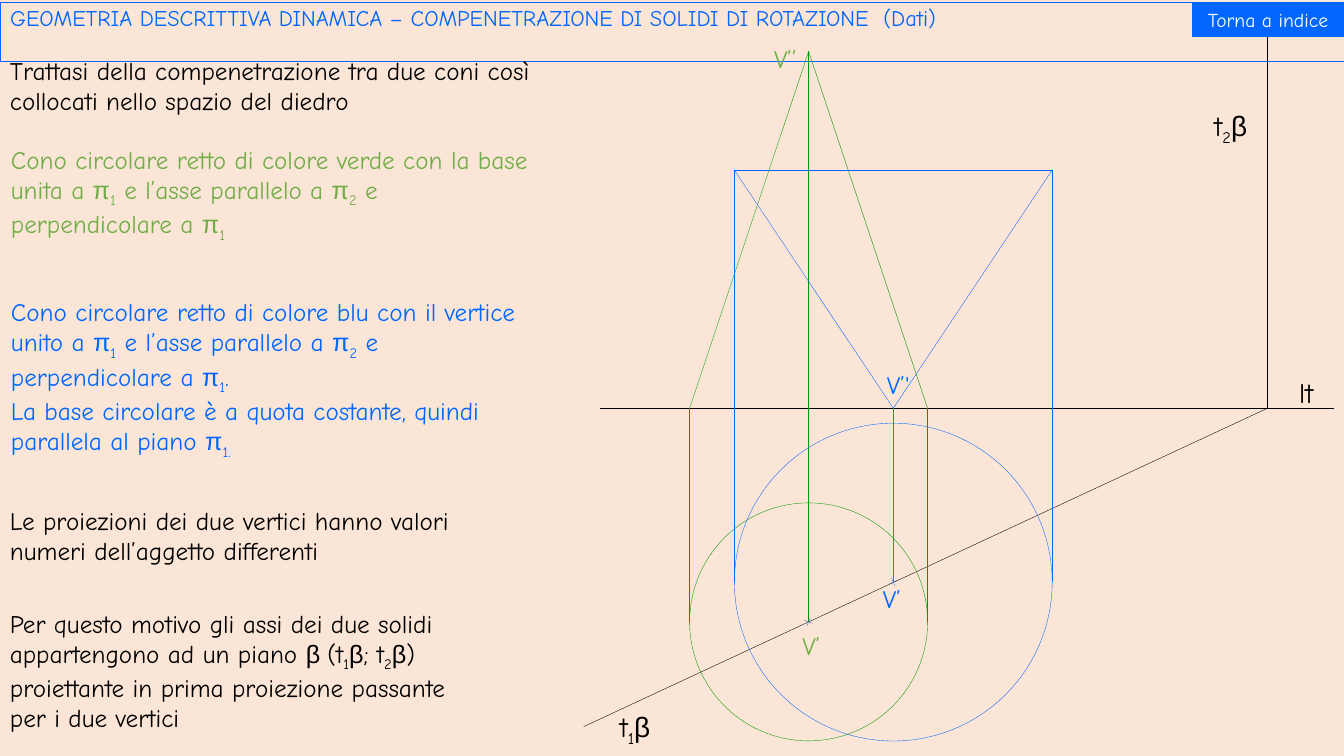
from lxml.etree import SubElement
from pptx import Presentation
from pptx.dml.color import RGBColor
from pptx.enum.shapes import MSO_CONNECTOR, MSO_SHAPE
from pptx.enum.text import MSO_ANCHOR, MSO_AUTO_SIZE, PP_ALIGN
from pptx.oxml.ns import qn
from pptx.util import Pt

BLACK = RGBColor(0x00, 0x00, 0x00)
WHITE = RGBColor(0xFF, 0xFF, 0xFF)
PEACH = RGBColor(0xFB, 0xE5, 0xD6)
BLUE = RGBColor(0x00, 0x66, 0xFF)
STEEL = RGBColor(0x44, 0x72, 0xC4)
GREEN = RGBColor(0x00, 0x99, 0x00)
LEAF = RGBColor(0x70, 0xAD, 0x47)


class Board:
    font = "Comic Neue"
    greek = "Arial"
    thin = Pt(0.25)

    def __init__(self, slide):
        self.shapes = slide.shapes
        fill = slide.background.fill
        fill.solid()
        fill.fore_color.rgb = PEACH

    def edge(self, shape, color):
        shape.line.color.rgb = color
        shape.line.width = self.thin

    def letter(self, frame, paras, size, color):
        """Runs that start with a digit are subscripts; Greek runs use Arial."""
        frame.word_wrap = True
        frame.auto_size = MSO_AUTO_SIZE.NONE
        for i, runs in enumerate(paras):
            para = frame.paragraphs[0] if i == 0 else frame.add_paragraph()
            for text in runs:
                run = para.add_run()
                run.text = text
                font = run.font
                font.size = Pt(size)
                font.color.rgb = color
                font.name = self.greek if text[0] in "πβ" else self.font
                if text[0].isdigit():
                    run._r.get_or_add_rPr().set("baseline", "-25000")

    def title(self, x, y, w, h, text):
        shape = self.shapes.title
        shape.left, shape.top, shape.width, shape.height = map(Pt, (x, y, w, h))
        self.edge(shape, BLUE)
        frame = shape.text_frame
        self.letter(frame, [[text]], 16, BLUE)
        frame.vertical_anchor = MSO_ANCHOR.TOP
        frame.paragraphs[0].alignment = PP_ALIGN.LEFT
        frame.paragraphs[0].line_spacing = 0.9

    def text(self, x, y, w, h, paras, color, size=18):
        box = self.shapes.add_textbox(Pt(x), Pt(y), Pt(w), Pt(h))
        self.letter(box.text_frame, paras, size, color)

    def line(self, x1, y1, x2, y2, color):
        link = self.shapes.add_connector(
            MSO_CONNECTOR.STRAIGHT, Pt(x1), Pt(y1), Pt(x2), Pt(y2))
        self.edge(link, color)
        SubElement(link._element.spPr, qn("a:effectLst"))

    def ring(self, x, y, r, color):
        ring = self.shapes.add_shape(
            MSO_SHAPE.OVAL, Pt(x - r), Pt(y - r), Pt(2 * r), Pt(2 * r))
        ring.shadow.inherit = False
        ring.rotation = 335
        ring.fill.background()
        self.edge(ring, color)

    def cross(self, x, y, a, b):
        for dx, dy in ((a, b), (-b, a)):
            self.line(x - dx, y - dy, x + dx, y + dy, STEEL)

    def cone(self, x, y, r, tip, base, color):
        """Plan circle at (x, y), elevation between tip and base heights."""
        self.ring(x, y, r, color)
        for side in (x - r, x + r):
            self.line(side, base, side, y, color)
            self.line(side, base, x, tip, color)

    def button(self, x, y, w, h, text):
        shape = self.shapes.add_shape(
            MSO_SHAPE.ACTION_BUTTON_CUSTOM, Pt(x), Pt(y), Pt(w), Pt(h))
        shape.shadow.inherit = False
        shape.fill.solid()
        shape.fill.fore_color.rgb = BLUE
        shape.line.fill.background()
        frame = shape.text_frame
        self.letter(frame, [[text]], 14, WHITE)
        frame.vertical_anchor = MSO_ANCHOR.MIDDLE
        frame.paragraphs[0].alignment = PP_ALIGN.CENTER


# Key points of the drawing
GROUND = 291.7
TRACE = 905.2
GX, GY, GR, APEX = 577.6, 444.2, 85, 36.7
BX, BY, BR, TOP = 638.1, 415.8, 113.5, 121.5

deck = Presentation()
deck.slide_width, deck.slide_height = Pt(960), Pt(540)
board = Board(deck.slides.add_slide(deck.slide_layouts[5]))
board.title(0, 1.4, 960, 42.6,
            "GEOMETRIA DESCRITTIVA DINAMICA – COMPENETRAZIONE DI SOLIDI DI ROTAZIONE  (Dati)")

# Ground line and traces of the plane
board.line(428.4, GROUND, 952.6, GROUND, BLACK)
board.line(417, 519, TRACE, GROUND, BLACK)
board.line(TRACE, 26, TRACE, GROUND, BLACK)

# Green cone
board.cone(GX, GY, GR, APEX, GROUND, GREEN)
board.line(GX, GY, GX, GROUND, GREEN)
board.line(GX, GROUND, GX, APEX, GREEN)
board.cross(GX, GY, 2.9, 1.2)

# Blue cone
board.cone(BX, BY, BR, GROUND, TOP, BLUE)
board.line(BX, BY, BX, GROUND, STEEL)
board.line(BX - BR, TOP, BX + BR, TOP, BLUE)
board.cross(BX, BY, 1.3, 2.9)

# Labels
board.text(566, 447, 31, 25.2, [["V’"]], LEAF)
board.text(545.8, 27.4, 33.8, 25.2, [["V’’"]], LEAF)
board.text(623.5, 413.3, 31, 28.8, [["V’"]], BLUE)
board.text(626.4, 260, 33.8, 28.8, [["V’'"]], BLUE)
board.text(435.6, 503.3, 44.6, 31.5, [["t", "1", "β"]], BLACK, 20)
board.text(860.4, 74.2, 44.6, 31.5, [["t", "2", "β"]], BLACK, 20)
board.text(920.9, 265, 30.2, 31.5, [["lt"]], BLACK, 20)

# Explanations
board.text(0, 36, 444.2, 51, [[
    "Trattasi della compenetrazione tra due coni così collocati nello spazio del diedro"]], BLACK)
place = ["π", "1", " e l’asse parallelo a ", "π", "2", " e perpendicolare a ", "π", "1"]
board.text(0.7, 99.4, 383.8, 72.7, [
    ["Cono circolare retto di colore verde con la base unita a ", *place]], LEAF)
board.text(0.7, 208.1, 394.6, 116.6, [
    ["Cono circolare retto di colore blu con il vertice unito a ", *place, "."],
    ["La base circolare è a quota costante, quindi parallela al piano ", "π", "1."]], BLUE)
board.text(0, 357.1, 334.8, 51, [[
    "Le proiezioni dei due vertici hanno valori numeri dell’aggetto differenti"]], BLACK)
board.text(0, 430.6, 348.5, 94.3, [[
    "Per questo motivo gli assi dei due solidi appartengono ad un piano ",
    "β ", "(t", "1", "β", "; t", "2", "β",
    ") proiettante in prima proiezione passante per i due vertici"]], BLACK)

# Button back to the index
board.button(851.8, 1.4, 108, 25.2, "Torna a indice")

deck.save("out.pptx")
